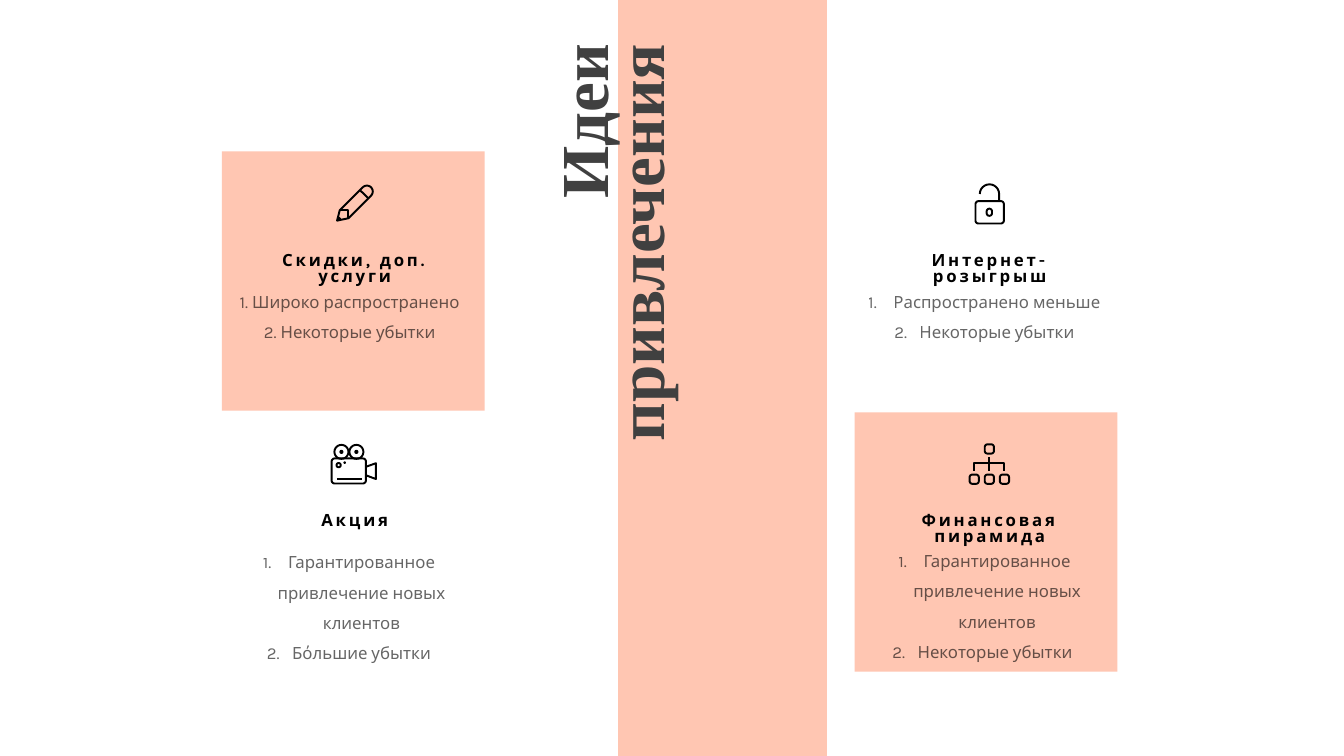
from math import cos, radians, sin

from lxml.etree import SubElement
from pptx import Presentation
from pptx.dml.color import RGBColor
from pptx.enum.shapes import MSO_SHAPE
from pptx.enum.text import PP_ALIGN
from pptx.oxml.ns import qn
from pptx.util import Pt

COLORS = {"peach": "FFC6B2", "ink": "000000", "title": "404040"}

presentation = Presentation()
presentation.slide_width = Pt(960)
presentation.slide_height = Pt(540)
slide = presentation.slides.add_slide(presentation.slide_layouts[6])
shapes = slide.shapes


def paint(shape, fill=None, line=None, width=1):
    """Set fill and outline by colour name; None leaves either one empty."""
    shape.shadow.inherit = False
    if fill:
        shape.fill.solid()
        shape.fill.fore_color.rgb = RGBColor.from_string(COLORS[fill])
    else:
        shape.fill.background()
    if line:
        shape.line.color.rgb = RGBColor.from_string(COLORS[line])
        shape.line.width = Pt(width)
    else:
        shape.line.fill.background()


def add_text(lines, left, top, width, height, *, size=12, font="Karla", color="ink",
             bold=False, align=PP_ALIGN.CENTER, line_spacing=1.0, tracking=0,
             opacity=100, numbered=False, margins=(0, 0, 0, 0), rotation=0):
    box = shapes.add_textbox(Pt(left), Pt(top), Pt(width), Pt(height))
    box.rotation = rotation
    frame = box.text_frame
    frame.word_wrap = True
    frame.margin_left, frame.margin_top, frame.margin_right, frame.margin_bottom = map(Pt, margins)
    for index, line in enumerate(lines):
        paragraph = frame.add_paragraph() if index else frame.paragraphs[0]
        paragraph.alignment = align
        paragraph.line_spacing = line_spacing
        if numbered:
            properties = paragraph._p.get_or_add_pPr()
            properties.set("marL", str(Pt(18)))
            properties.set("indent", str(-Pt(18)))
            SubElement(properties, qn("a:buFont"), typeface=font)
            SubElement(properties, qn("a:buAutoNum"), type="arabicPeriod")
        run = paragraph.add_run()
        run.text = line
        run.font.size = Pt(size)
        run.font.name = font
        run.font.bold = bold
        run.font.color.rgb = RGBColor.from_string(COLORS[color])
        run_properties = run._r.get_or_add_rPr()
        if tracking:
            run_properties.set("spc", str(tracking * 100))
        if opacity < 100:
            rgb = run_properties.find(".//" + qn("a:srgbClr"))
            SubElement(rgb, qn("a:alpha"), val=str(opacity * 1000))


# Panels behind two of the four ideas
for left, top in [(158.4, 108.2), (610.4, 294.5)]:
    panel = shapes.add_shape(MSO_SHAPE.RECTANGLE, Pt(left), Pt(top), Pt(187.8), Pt(185.2))
    paint(panel, fill="peach")

# Ideas: heading left and top, body left, top and width, numbered list or not
ideas = [
    ("Скидки, доп. услуги", 184.3, 180.9, 162.3, 200.9, 182.2, False,
     ["1. Широко распространено", "2. Некоторые убытки"]),
    ("Акция", 184.3, 367, 154.2, 387.1, 197.3, True,
     ["Гарантированное привлечение новых клиентов", "Бόльшие убытки"]),
    ("Интернет- розыгрыш", 637.9, 180.9, 615.6, 200.9, 182.2, True,
     ["Распространено меньше", "Некоторые убытки"]),
    ("Финансовая пирамида", 637.9, 367, 615.7, 386.3, 182.2, True,
     ["Гарантированное привлечение новых клиентов", "Некоторые убытки "]),
]
for heading, left, top, body_left, body_top, body_width, numbered, points in ideas:
    add_text([heading], left, top, 138.2, 23, bold=True, line_spacing=0.8, tracking=2)
    add_text(points, body_left, body_top, body_width, 43.5, line_spacing=1.5,
             opacity=60, numbered=numbered, margins=(0, 0, 7.2, 0))

# Icons: open strokes, then rounded outlines as left, top, width, height, corner radius
pencil_cap = [(262.1 + 4.2 * cos(radians(a)), 136.8 + 4.2 * sin(radians(a)))
              for a in range(-135, 46, 15)]
shackle = [(706.8 + 6.9 * cos(radians(a)), 138.6 + 6.9 * sin(radians(a)))
           for a in range(180, 361, 15)]
reels = [(center - radius, 322.8 - radius, 2 * radius, 2 * radius, radius)
         for center in (243.9, 254.6) for radius in (5, 0.75)]
pyramid_base = [(692.6 + 10.8 * step, 339, 6.6, 6.6, 2) for step in range(3)]
icons = [
    # pencil
    ([[(240.8, 157.6), (242.7, 150.2), *pencil_cap, (249, 155.9), (240.8, 157.6)],
      [(257.4, 136.1), (263.1, 141.6)],
      [(242.7, 150.2), (248.4, 150.2), (248.4, 156.2)],
      [(241.7, 155.2), (243.2, 156.6), (241, 157.2)]], []),
    # open lock
    ([[*shackle, (713.7, 143.7)]],
     [(696.8, 143.7, 20.3, 16, 2.2), (704.8, 149.1, 3.8, 5.1, 1.9)]),
    # camera
    ([[(240.6, 342.2), (258.6, 342.2)],
      [(261.6, 333.4), (268.5, 330.9), (268.5, 342.2), (261.6, 339.6)]],
     [(236.9, 327.5, 24.5, 17.9, 2.2), (240.4, 330.8, 3, 3, 1.5),
      (246, 330.3, 0.4, 0.4, 0.2), *reels]),
    # pyramid
    ([[(706.7, 326.6), (706.7, 336.3)],
      [(695.9, 336.3), (695.9, 330.5), (717.5, 330.5), (717.5, 336.3)]],
     [(703.4, 317.4, 6.6, 6.6, 2), *pyramid_base]),
]
for strokes, outlines in icons:
    contours = list(strokes)
    for left, top, width, height, radius in outlines:
        corners = [(left + width - radius, top + height - radius, 0),
                   (left + radius, top + height - radius, 90),
                   (left + radius, top + radius, 180),
                   (left + width - radius, top + radius, 270)]
        ring = [(x + radius * cos(radians(turn + a)), y + radius * sin(radians(turn + a)))
                for x, y, turn in corners for a in range(0, 91, 15)]
        contours.append(ring + ring[:1])
    builder = None
    for contour in contours:
        start, *rest = [(Pt(x), Pt(y)) for x, y in contour]
        if builder:
            builder.move_to(*start)
        else:
            builder = shapes.build_freeform(*start)
        builder.add_line_segments(rest, close=contour[0] == contour[-1])
    paint(builder.convert_to_shape(), line="ink", width=1.4)

# Vertical band with the turned title
band = shapes.add_shape(MSO_SHAPE.RECTANGLE, Pt(442.3), Pt(0), Pt(148.2), Pt(540))
paint(band, fill="peach", line="peach")
add_text(["Идеи привлечения"], 304.2, 118.8, 304.6, 115.2, size=48, font="Times New Roman",
         color="title", bold=True, align=PP_ALIGN.RIGHT, line_spacing=0.7,
         margins=(7.2, 3.6, 7.2, 3.6), rotation=270)

presentation.save("out.pptx")
